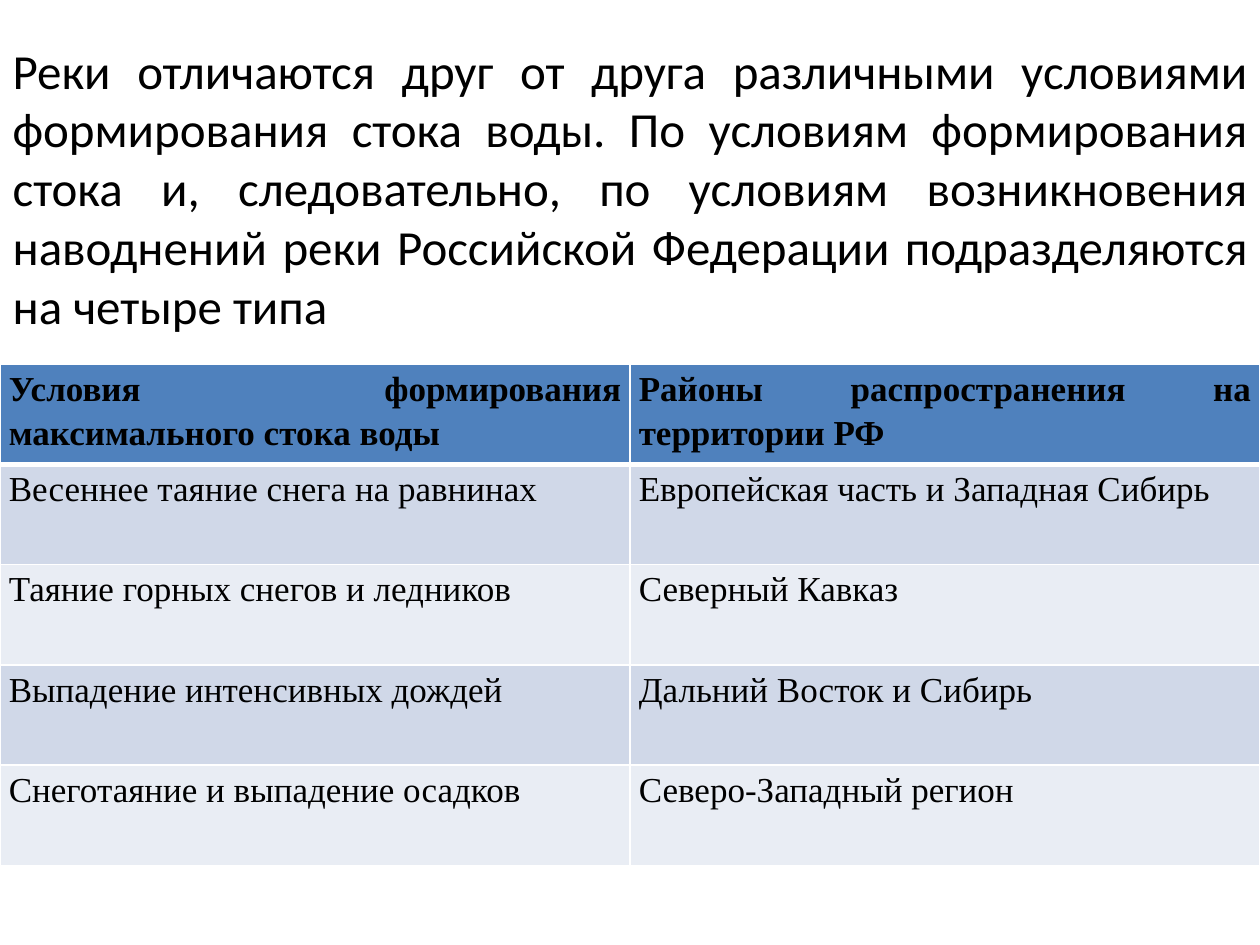
"""Build a slide on the four types of rivers by runoff formation."""
from lxml import etree
from pptx import Presentation
from pptx.dml.color import RGBColor
from pptx.enum.text import MSO_ANCHOR, PP_ALIGN
from pptx.oxml.ns import qn
from pptx.util import Inches, Pt

JUSTIFY = PP_ALIGN.JUSTIFY
MIDDLE = MSO_ANCHOR.MIDDLE

BLACK = RGBColor(0x00, 0x00, 0x00)
WHITE = RGBColor(0xFF, 0xFF, 0xFF)
HEADER_BLUE = RGBColor(0x4F, 0x81, 0xBD)
BANDS = (RGBColor(0xE9, 0xED, 0xF4), RGBColor(0xD0, 0xD8, 0xE8))

INTRO = (
    "Реки отличаются друг от друга различными условиями формирования стока воды. "
    "По условиям формирования стока и, следовательно, по условиям возникновения "
    "наводнений реки Российской Федерации подразделяются на четыре типа"
)
RIVER_TYPES = (
    ("Условия формирования максимального стока воды",
     "Районы распространения на территории РФ"),
    ("Весеннее таяние снега на равнинах", "Европейская часть и Западная Сибирь"),
    ("Таяние горных снегов и ледников", "Северный Кавказ"),
    ("Выпадение интенсивных дождей", "Дальний Восток и Сибирь"),
    ("Снеготаяние и выпадение осадков", "Северо-Западный регион"),
)


class SlideBuilder:
    """Holds the text style and the current slide."""

    title_font, title_size = "Calibri", Pt(28)
    table_font, table_size = "Times New Roman", Pt(20)

    def __init__(self, slide):
        self.slide = slide

    def format_text(self, frame, font_name, size, bold=False):
        """Justify the paragraphs and set the font of their runs."""
        for paragraph in frame.paragraphs:
            paragraph.alignment = JUSTIFY
            for run in paragraph.runs:
                run.font.name = font_name
                run.font.size = size
                run.font.bold = bold
                run.font.color.rgb = BLACK

    def title(self, text, left, top, width, height):
        """Place and fill the title placeholder."""
        heading = self.slide.shapes.title
        heading.left, heading.top = left, top
        heading.width, heading.height = width, height
        frame = heading.text_frame
        frame.text = text
        frame.word_wrap = True
        frame.vertical_anchor = MIDDLE
        self.format_text(frame, self.title_font, self.title_size)

    def borders(self, cell, widths):
        """Draw white cell borders of the given widths in points."""
        properties = cell._tc.get_or_add_tcPr()
        for side, points in widths.items():
            line = etree.SubElement(properties, qn(f"a:ln{side}"), w=str(Pt(points)))
            fill = etree.SubElement(line, qn("a:solidFill"))
            etree.SubElement(fill, qn("a:srgbClr"), val=str(WHITE))

    def cell(self, cell, text, row):
        """Fill and format one table cell."""
        is_header = row == 0
        self.borders(cell, {"L": 1, "R": 1, "T": 3 if row == 1 else 1,
                            "B": 3 if is_header else 1})
        cell.fill.solid()
        cell.fill.fore_color.rgb = HEADER_BLUE if is_header else BANDS[row % 2]
        cell.margin_left = cell.margin_right = Inches(0.07)
        cell.margin_top = cell.margin_bottom = 0
        cell.text_frame.text = text
        cell.text_frame.paragraphs[0].line_spacing = 1.15
        self.format_text(cell.text_frame, self.table_font, self.table_size, is_header)

    def table(self, rows, left, top, width, height):
        """Add a table with a header row and banded body rows."""
        grid = self.slide.shapes.add_table(
            len(rows), len(rows[0]), left, top, width, height).table
        for row, texts in enumerate(rows):
            for column, text in enumerate(texts):
                self.cell(grid.cell(row, column), text, row)


def main():
    """Create the presentation and save it."""
    presentation = Presentation()
    presentation.slide_width = Inches(10)
    presentation.slide_height = Inches(7.5)
    title_only = presentation.slide_layouts[5]
    builder = SlideBuilder(presentation.slides.add_slide(title_only))
    builder.title(INTRO, 0, 0, Inches(10), Inches(2.97))
    builder.table(RIVER_TYPES, 0, Inches(2.89), Inches(10), Inches(3.98))
    presentation.save("out.pptx")


if __name__ == "__main__":
    main()
